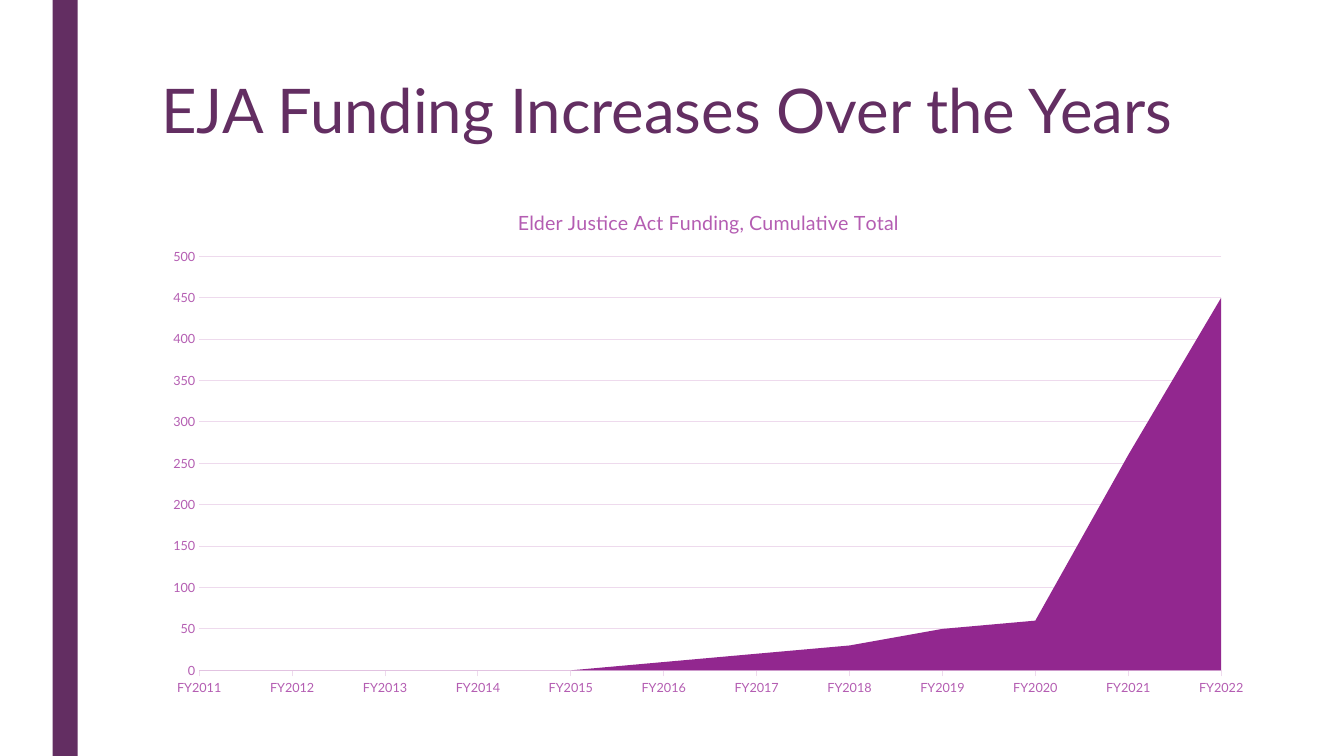
from collections import namedtuple
from dataclasses import dataclass

from lxml.etree import SubElement
from pptx import Presentation
from pptx.chart.data import CategoryChartData
from pptx.dml.color import RGBColor
from pptx.enum.chart import XL_CHART_TYPE, XL_TICK_MARK
from pptx.enum.shapes import MSO_SHAPE
from pptx.enum.text import MSO_ANCHOR
from pptx.oxml.ns import qn
from pptx.util import Pt

Box = namedtuple("Box", "left top width height")


@dataclass(frozen=True)
class Theme:
    font: str = "Lato"
    dark: str = "632E62"
    label: str = "B45DB2"
    grid: str = "EEDAED"
    area: str = "92278F"
    heading_size: float = 44
    chart_title_size: float = 14
    chart_size: float = 10
    axis_size: float = 9
    line_width: float = 0.75


THEME = Theme()
FUNDING = [0, 0, 0, 0, 0, 10, 20, 30, 50, 60, 260, 450]
YEARS = [f"FY{2011 + index}" for index in range(len(FUNDING))]


def style_font(font, size, color):
    font.name = THEME.font
    font.size = Pt(size)
    font.bold = False
    font.color.rgb = RGBColor.from_string(color)


def style_line(line):
    line.color.rgb = RGBColor.from_string(THEME.grid)
    line.width = Pt(THEME.line_width)


def in_points(box):
    return [Pt(length) for length in box]


def add_side_bar(page, box):
    bar = page.shapes.add_shape(MSO_SHAPE.RECTANGLE, *in_points(box))
    bar.shadow.inherit = False
    bar.fill.solid()
    bar.fill.fore_color.rgb = RGBColor.from_string(THEME.dark)
    bar.line.fill.background()


def add_heading(page, box, text):
    frame = page.shapes.add_textbox(*in_points(box)).text_frame
    frame.word_wrap = True
    frame.vertical_anchor = MSO_ANCHOR.TOP
    para = frame.paragraphs[0]
    para.line_spacing = 0.89
    span = para.add_run()
    span.text = text
    style_font(span.font, THEME.heading_size, THEME.dark)


def place_plot(chart, box, inner):
    plot_area = chart.plots[0]._element.getparent()
    layout = plot_area.find(qn("c:layout"))
    if layout is None:
        layout = SubElement(plot_area, qn("c:layout"))
        plot_area.insert(0, layout)
    manual = SubElement(layout, qn("c:manualLayout"))
    settings = [
        ("layoutTarget", "inner"),
        ("xMode", "edge"),
        ("yMode", "edge"),
        ("x", inner.left / box.width),
        ("y", inner.top / box.height),
        ("w", inner.width / box.width),
        ("h", inner.height / box.height),
    ]
    for name, value in settings:
        SubElement(manual, qn(f"c:{name}")).set("val", str(value))


def add_funding_chart(page, box):
    data = CategoryChartData()
    data.categories = YEARS
    data.add_series("Series 1", FUNDING)
    chart = page.shapes.add_chart(XL_CHART_TYPE.AREA, *in_points(box), data).chart
    style_font(chart.font, THEME.chart_size, THEME.dark)
    chart.has_legend = False

    chart.has_title = True
    span = chart.chart_title.text_frame.paragraphs[0].add_run()
    span.text = "Elder Justice Act Funding, Cumulative Total"
    style_font(span.font, THEME.chart_title_size, THEME.label)
    chart.chart_title.include_in_layout = False

    years, amounts = chart.category_axis, chart.value_axis
    for axis in (years, amounts):
        style_font(axis.tick_labels.font, THEME.axis_size, THEME.label)
        axis.minor_tick_mark = XL_TICK_MARK.NONE
    years.major_tick_mark = XL_TICK_MARK.OUTSIDE
    years.has_major_gridlines = False
    style_line(years.format.line)
    amounts.major_tick_mark = XL_TICK_MARK.NONE
    amounts.minimum_scale = 0
    amounts.maximum_scale = 500
    amounts.major_unit = 50
    amounts.has_major_gridlines = True
    style_line(amounts.major_gridlines.format.line)
    amounts.format.line.fill.background()
    amounts._element.find(qn("c:crossBetween")).set("val", "midCat")

    plot = chart.plots[0]
    plot.vary_by_categories = False
    fill = plot.series[0].format.fill
    fill.solid()
    fill.fore_color.rgb = RGBColor.from_string(THEME.area)
    plot.series[0].format.line.fill.background()
    place_plot(chart, box, Box(34.3, 48.6, 730, 295.7))


def build_funding_page(page, box):
    add_side_bar(page, Box(box.left + 37.5, box.top, 18, box.height))
    add_heading(page, Box(box.left + 108, box.top + 54, 756, 116.5),
                "EJA Funding Increases Over the Years")
    add_funding_chart(page, Box(box.left + 108, box.top + 134.6, 796.3, 370))


def main():
    deck = Presentation()
    deck.slide_width, deck.slide_height = Pt(960), Pt(540)
    page = deck.slides.add_slide(deck.slide_layouts[6])
    build_funding_page(page, Box(0, 0, 960, 540))
    deck.save("out.pptx")


if __name__ == "__main__":
    main()
